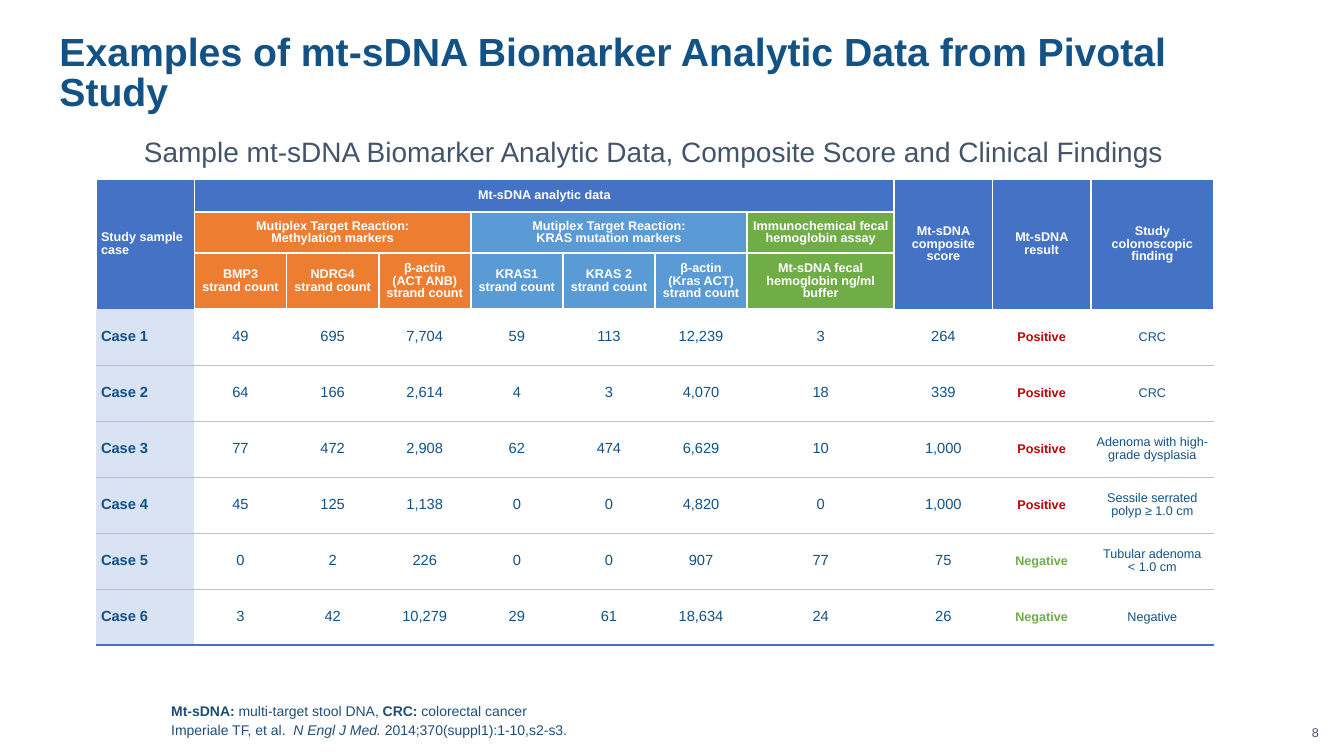
import copy

import lxml.etree
import pptx
import pptx.dml.color
import pptx.enum.text
import pptx.oxml.ns
import pptx.util

Pt = pptx.util.Pt
qn = pptx.oxml.ns.qn
ALIGN = pptx.enum.text.PP_ALIGN
ANCHOR = pptx.enum.text.MSO_ANCHOR
COLOURS = {
    "navy": "125285", "slate": "44546A", "note": "1F4E79", "white": "FFFFFF",
    "blue": "4472C4", "orange": "ED7D31", "sky": "5B9BD5", "green": "70AD47",
    "red": "C00000", "pale": "DAE3F3", "grey": "BFBFBF",
}
NO_STYLE_NO_GRID = "{2D5ABB26-0587-4C30-8999-92F81FD0307C}"


def write(frame, text, size, colour, bold=False, align=ALIGN.LEFT, anchor=ANCHOR.TOP,
          spacing=0.85, before=0, insets=(7.2, 3.6), cell=None):
    """Fill a frame with a string, or with paragraphs that are lists of (text, mark) runs;
    the mark "b" is bold and "i" italic. insets are horizontal and vertical. A table cell
    holds its own insets and anchor, so it is passed along with its frame."""
    if cell is None:
        frame.word_wrap = True
    box = frame if cell is None else cell
    box.vertical_anchor = anchor
    box.margin_left = box.margin_right = Pt(insets[0])
    box.margin_top = box.margin_bottom = Pt(insets[1])
    paragraphs = [[(text, "b" if bold else "")]] if isinstance(text, str) else text
    for index, pieces in enumerate(paragraphs):
        paragraph = frame.paragraphs[0] if index == 0 else frame.add_paragraph()
        paragraph.alignment = align
        paragraph.line_spacing = spacing
        paragraph.space_before = Pt(before)
        for piece, mark in pieces:
            for number, line in enumerate(piece.split("\n")):
                if number:
                    paragraph.add_line_break()
                run = paragraph.add_run()
                run.text = line
                run.font.name = "Arial"
                run.font.size = Pt(size)
                run.font.bold = mark == "b"
                run.font.italic = mark == "i"
                run.font.color.rgb = pptx.dml.color.RGBColor.from_string(COLOURS[colour])
        # A line break needs the size of its text, or it makes the line taller
        for line_break in paragraph._p.findall(qn("a:br")):
            line_break.insert(0, copy.deepcopy(run._r.rPr))


def border(cell, sides, colour, width):
    """Draw lines on the sides, given as letters in the order L, R, T, B."""
    for side in sides:
        line = lxml.etree.SubElement(cell._tc.get_or_add_tcPr(), qn("a:ln" + side),
                                     w=str(Pt(width)))
        fill = lxml.etree.SubElement(line, qn("a:solidFill"))
        lxml.etree.SubElement(fill, qn("a:srgbClr"), val=COLOURS[colour])


deck = pptx.Presentation()
deck.slide_width = Pt(960)
deck.slide_height = Pt(540)
slide = deck.slides.add_slide(deck.slide_layouts[5])

title = slide.shapes.title
title.left, title.top, title.width, title.height = Pt(35.3), Pt(10.5), Pt(889), Pt(75)
title.text_frame.auto_size = pptx.enum.text.MSO_AUTO_SIZE.NONE
write(title.text_frame, "Examples of mt-sDNA Biomarker Analytic Data from Pivotal Study",
      size=28, colour="navy", bold=True, anchor=ANCHOR.BOTTOM)

subtitle = slide.shapes.add_textbox(Pt(95.7), Pt(96.5), Pt(745), Pt(31))
write(subtitle.text_frame,
      "Sample mt-sDNA Biomarker Analytic Data, Composite Score and Clinical Findings",
      size=20, colour="slate")

footnote = slide.shapes.add_textbox(Pt(115.2), Pt(493.2), Pt(528), Pt(34))
write(footnote.text_frame, [
    [("Mt-sDNA: ", "b"), ("multi-target stool DNA, ", ""),
     ("CRC: ", "b"), ("colorectal cancer", "")],
    [("Imperiale TF, et al.  ", ""), ("N Engl J Med. ", "i"),
     ("2014;370(suppl1):1-10,s2-s3.", "")],
], size=10, colour="note", anchor=ANCHOR.BOTTOM, before=3, insets=(7.2, 0))

page_number = slide.shapes.add_textbox(Pt(907), Pt(519), Pt(35), Pt(9.5))
write(page_number.text_frame, "8", size=9, colour="slate", align=ALIGN.RIGHT,
      anchor=ANCHOR.BOTTOM, spacing=0.9, insets=(0, 0))

# Row, column, rows spanned, columns spanned, text, fill
headings = [
    (0, 0, 3, 1, "Study sample case", "blue"),
    (0, 1, 1, 7, "Mt-sDNA analytic data", "blue"),
    (0, 8, 3, 1, "Mt-sDNA composite score", "blue"),
    (0, 9, 3, 1, "Mt-sDNA result", "blue"),
    (0, 10, 3, 1, "Study colonoscopic finding", "blue"),
    (1, 1, 1, 3, "Mutiplex Target Reaction:\nMethylation markers", "orange"),
    (1, 4, 1, 3, "Mutiplex Target Reaction:\nKRAS mutation markers", "sky"),
    (1, 7, 1, 1, "Immunochemical fecal hemoglobin assay", "green"),
    (2, 1, 1, 1, "BMP3\nstrand count", "orange"),
    (2, 2, 1, 1, "NDRG4 strand count", "orange"),
    (2, 3, 1, 1, "β-actin\n(ACT ANB) strand count", "orange"),
    (2, 4, 1, 1, "KRAS1 strand count", "sky"),
    (2, 5, 1, 1, "KRAS 2 strand count", "sky"),
    (2, 6, 1, 1, "β-actin\n(Kras ACT) strand count", "sky"),
    (2, 7, 1, 1, "Mt-sDNA fecal hemoglobin ng/ml buffer", "green"),
]
cases = [
    ("Case 1", "49", "695", "7,704", "59", "113", "12,239", "3", "264", "Positive", "CRC"),
    ("Case 2", "64", "166", "2,614", "4", "3", "4,070", "18", "339", "Positive", "CRC"),
    ("Case 3", "77", "472", "2,908", "62", "474", "6,629", "10", "1,000", "Positive",
     "Adenoma with high-grade dysplasia"),
    ("Case 4", "45", "125", "1,138", "0", "0", "4,820", "0", "1,000", "Positive",
     "Sessile serrated polyp ≥ 1.0 cm"),
    ("Case 5", "0", "2", "226", "0", "0", "907", "77", "75", "Negative",
     "Tubular adenoma\n< 1.0 cm"),
    ("Case 6", "3", "42", "10,279", "29", "61", "18,634", "24", "26", "Negative", "Negative"),
]
widths = [70.3] + [65.8] * 6 + [105.1, 70.2, 70.2, 88]
heights = [23.4, 29.4] + [40] * 7
HEADER_ROWS = 3
CASE, RESULT, FINDING = 0, 9, 10

table = slide.shapes.add_table(len(heights), len(widths), Pt(68.6), Pt(128.2),
                               Pt(sum(widths)), Pt(sum(heights))).table
table._tbl.tblPr.find(qn("a:tableStyleId")).text = NO_STYLE_NO_GRID
table.first_row = table.horz_banding = False
for column, width in zip(table.columns, widths):
    column.width = Pt(width)
for row, height in zip(table.rows, heights):
    row.height = Pt(height)

for row, column, down, across, text, fill in headings:
    cell = table.cell(row, column)
    if down * across > 1:
        cell.merge(table.cell(row + down - 1, column + across - 1))
    border(cell, "LRTB" if row + down < HEADER_ROWS else "LRT", "white", 1.5)
    cell.fill.solid()
    cell.fill.fore_color.rgb = pptx.dml.color.RGBColor.from_string(COLOURS[fill])
    write(cell.text_frame, text, size=9, colour="white", bold=True, spacing=0.9,
          align=ALIGN.LEFT if column == CASE else ALIGN.CENTER, anchor=ANCHOR.MIDDLE,
          insets=(0 if "Kras ACT" in text else 3.6, 3.6), cell=cell)

for row, case in enumerate(cases, HEADER_ROWS):
    for column, value in enumerate(case):
        cell = table.cell(row, column)
        if row == len(heights) - 1:
            border(cell, "B", "blue", 1.5)
        else:
            border(cell, "B", "grey", 1)
        if column == CASE:
            cell.fill.solid()
            cell.fill.fore_color.rgb = pptx.dml.color.RGBColor.from_string(COLOURS["pale"])
        else:
            cell.fill.background()
        colour = "navy"
        if column == RESULT:
            colour = "red" if value == "Positive" else "green"
        write(cell.text_frame, value, size=9 if column in (RESULT, FINDING) else 10.5,
              colour=colour, bold=column in (CASE, RESULT), spacing=0.9,
              align=ALIGN.LEFT if column == CASE else ALIGN.CENTER, anchor=ANCHOR.MIDDLE,
              insets=(3.6, 3.6), cell=cell)

deck.save("out.pptx")
